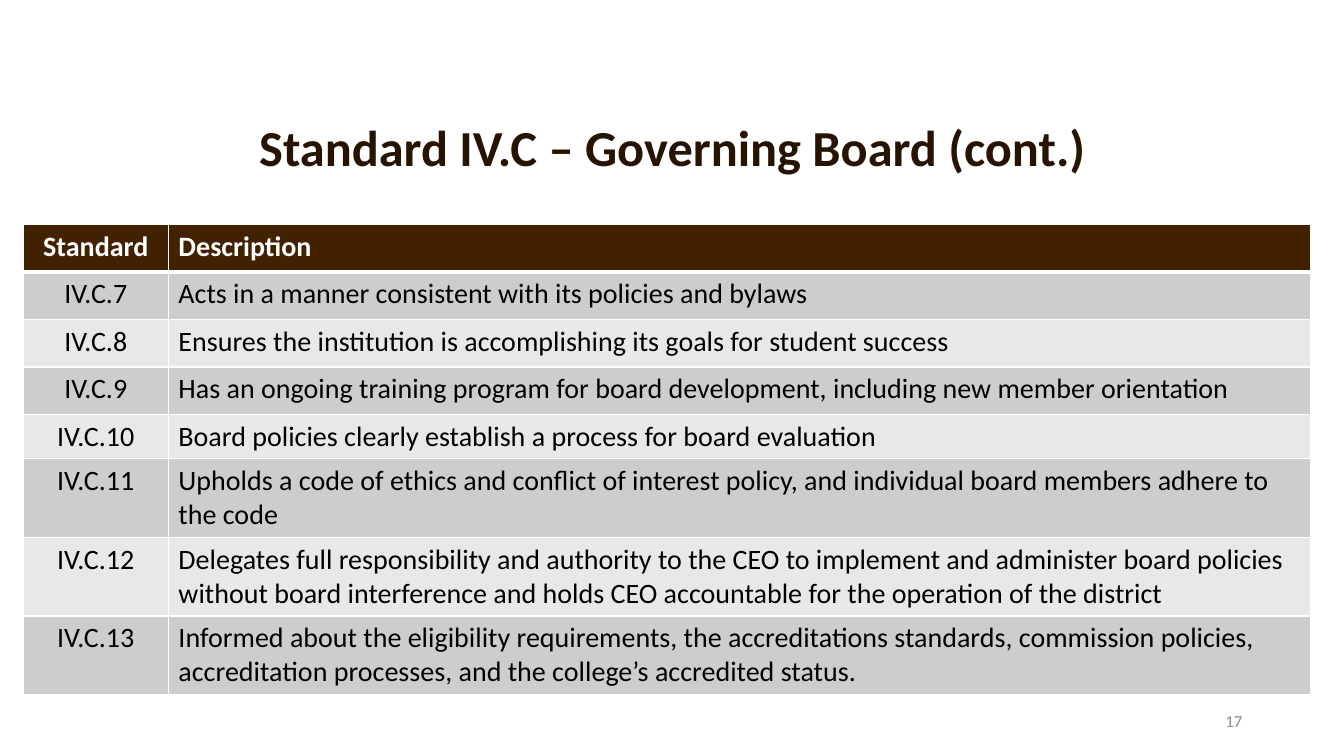
import pptx
import pptx.util
import pptx.oxml
import pptx.dml.color
import pptx.enum.text
import pptx.oxml.ns

Align = pptx.enum.text.PP_ALIGN
Anchor = pptx.enum.text.MSO_ANCHOR

INK = {"title": "261300", "page": "8C8C8C", "head": "422100", "odd": "CFCDCC",
       "even": "E9E8E7", "white": "FFFFFF", "black": "000000"}

ROWS = [
    ("Standard", "Description"),
    ("IV.C.7", "Acts in a manner consistent with its policies and bylaws"),
    ("IV.C.8", "Ensures the institution is accomplishing its goals for student success"),
    ("IV.C.9", "Has an ongoing training program for board development, "
               "including new member orientation"),
    ("IV.C.10", "Board policies clearly establish a process for board evaluation"),
    ("IV.C.11", "Upholds a code of ethics and conflict of interest policy, "
                "and individual board members adhere to the code"),
    ("IV.C.12", "Delegates full responsibility and authority to the CEO to implement and "
                "administer board policies without board interference and holds CEO "
                "accountable for the operation of the district"),
    ("IV.C.13", "Informed about the eligibility requirements, the accreditations standards, "
                "commission policies, accreditation processes, and the college’s "
                "accredited status."),
]
WIDTHS = [10.8, 85]
HEIGHTS = [6.27] * 4 + [5.87] + [10.4] * 3


def tint(name):
    return pptx.dml.color.RGBColor.from_string(INK[name])


class Deck:
    """Places elements on a grid of 100 columns by 100 rows."""

    def __init__(self):
        self.show = pptx.Presentation()
        self.show.slide_width = pptx.util.Inches(13.33)
        self.show.slide_height = pptx.util.Inches(7.5)
        self.slide = self.show.slides.add_slide(self.show.slide_layouts[6])
        self.face = "Calibri"

    def col(self, n):
        return round(self.show.slide_width * n / 100)

    def row(self, n):
        return round(self.show.slide_height * n / 100)

    def box(self, x, y, wide, high):
        return self.col(x), self.row(y), self.col(wide), self.row(high)

    def label(self, frame, words, ink, size, bold=False, **form):
        frame.word_wrap = True
        para = frame.paragraphs[0]
        for key, value in form.items():
            setattr(para, key, value)
        run = para.add_run()
        run.text = words
        look = {"name": self.face, "size": pptx.util.Pt(size), "bold": bold}
        for key, value in look.items():
            setattr(run.font, key, value)
        run.font.color.rgb = tint(ink)

    def text(self, spot, words, ink, size, **form):
        frame = self.slide.shapes.add_textbox(*self.box(*spot)).text_frame
        frame.vertical_anchor = Anchor.MIDDLE
        self.label(frame, words, ink, size, **form)

    def edge(self, cell, widths):
        """Draws white borders; widths gives points for left, right, top, bottom."""
        props = cell._tc.get_or_add_tcPr()
        for spot, (side, points) in enumerate(zip("LRTB", widths)):
            props.insert(spot, pptx.oxml.parse_xml(
                f'<a:ln{side} {pptx.oxml.ns.nsdecls("a")} w="{pptx.util.Pt(points)}">'
                f'<a:solidFill><a:srgbClr val="{INK["white"]}"/></a:solidFill></a:ln{side}>'))

    def table(self, x, y, rows, wides, highs):
        spot = self.box(x, y, sum(wides), sum(highs))
        grid = self.slide.shapes.add_table(len(rows), len(wides), *spot).table
        grid.horz_banding = False
        for part, wide in zip(grid.columns, wides):
            part.width = self.col(wide)
        for part, high in zip(grid.rows, highs):
            part.height = self.row(high)
        for r, line in enumerate(rows):
            head = r == 0
            fill = "head" if head else ("even", "odd")[r % 2]
            for c, words in enumerate(line):
                cell = grid.cell(r, c)
                cell.fill.solid()
                cell.fill.fore_color.rgb = tint(fill)
                self.edge(cell, (1, 1, 3 if r == 1 else 1, 3 if head else 1))
                self.label(cell.text_frame, words, "white" if head else "black", 20,
                           bold=head, alignment=Align.LEFT if c else Align.CENTER)


def main():
    deck = Deck()
    deck.text((6.9, 13.2, 86.27, 13.33), "Standard IV.C – Governing Board (cont.)",
              "title", 36, bold=True, alignment=Align.CENTER, line_spacing=0.9)
    deck.text((70.67, 92.67, 22.5, 5.33), "17", "page", 12, alignment=Align.RIGHT)
    deck.table(1.73, 29.73, ROWS, WIDTHS, HEIGHTS)
    deck.show.save("out.pptx")


if __name__ == "__main__":
    main()
